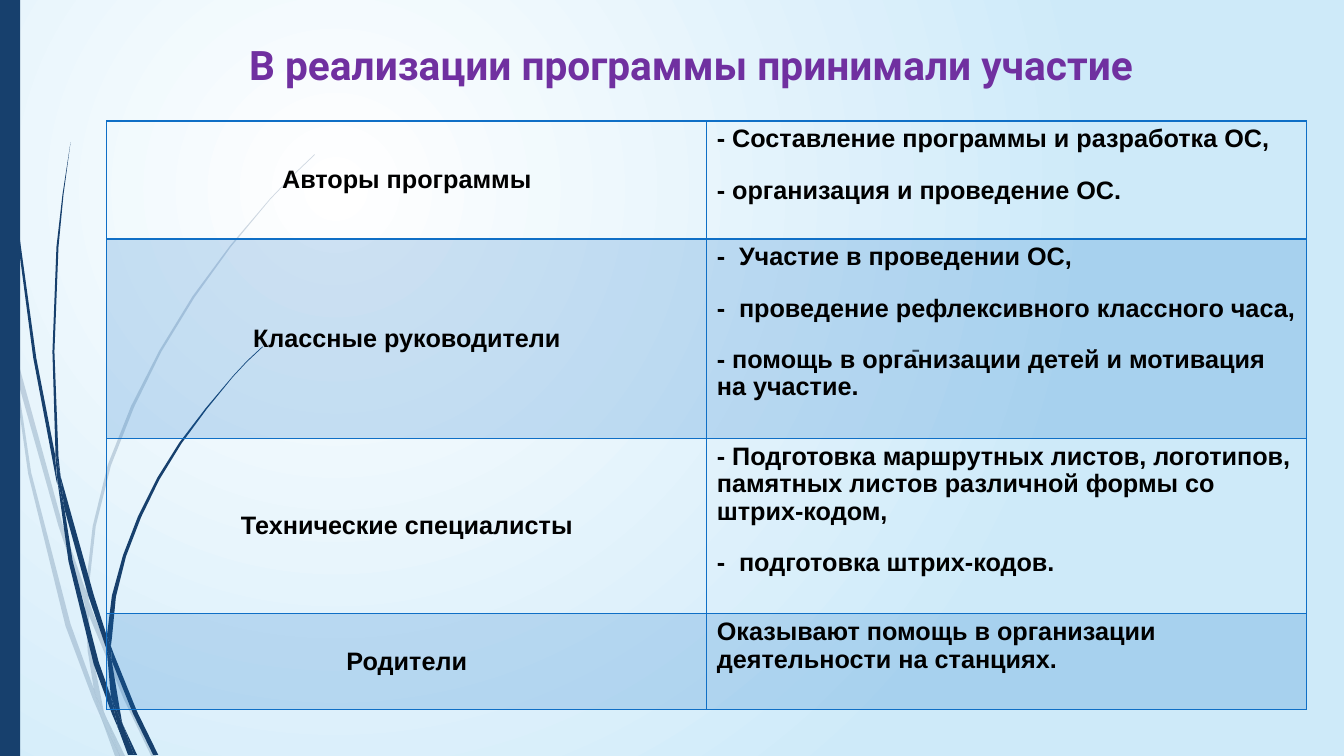
from pptx import Presentation
from pptx.dml.color import RGBColor
from pptx.enum.shapes import MSO_SHAPE
from pptx.enum.text import MSO_ANCHOR, PP_ALIGN
from pptx.oxml.ns import qn
from pptx.util import Inches, Pt
from lxml.etree import SubElement

COLORS = {
    "white": "FFFFFF", "sky": "CEEAF9", "navy": "17406D", "blue": "0F6FC6",
    "purple": "7030A0", "gray": "404040", "black": "000000",
}
TITLE = "В реализации программы принимали участие"
TITLE_FONT = {"name": "Roboto", "size": Pt(29), "bold": True}
TABLE_FONT = {"name": "Arial", "size": Pt(18), "bold": True}
DASH_FONT = {"name": "Arial", "size": Pt(19.4), "bold": False}

ROWS = [
    (1.17, "Авторы программы", [
        "- Составление программы и разработка ОС,",
        "- организация и проведение ОС."]),
    (1.98, "Классные руководители", [
        "-\tУчастие в проведении ОС,",
        "-\tпроведение рефлексивного классного часа,",
        "- помощь в организации детей и мотивация на участие."]),
    (1.74, "Технические специалисты", [
        "- Подготовка маршрутных листов, логотипов, памятных листов "
        "различной формы со штрих-кодом,",
        "-\tподготовка штрих-кодов."]),
    (0.95, "Родители", [
        "Оказывают помощь в организации деятельности на станциях."]),
]

PALE_STALKS = [
    [(0.11, 3.5), (0.09, 3.22), (0, 2.82), (0, 2.99), (0.1, 3.44)],
    [(0.58, 5.22), (0.84, 5.99), (0.85, 5.86), (0.62, 5.2), (0.14, 3.45),
     (0.17, 3.76)],
    [(0.92, 6.07), (0.88, 5.96), (0.88, 6.1), (1.23, 6.94), (1.5, 7.5),
     (1.55, 7.5), (1.27, 6.92)],
    [(1.19, 7.5), (1.24, 7.5), (1.05, 7.11)],
    [(0.93, 6.83), (0.7, 6.19), (0.31, 4.69), (0.17, 3.76), (0.11, 3.5),
     (0.28, 4.7), (0.65, 6.21), (0.92, 6.93), (1.01, 7.14), (0.99, 7.07)],
    [(0.84, 5.99), (0.87, 6.46), (0.93, 6.83), (0.96, 6.92), (1.05, 7.11),
     (1.03, 7.06), (0.91, 6.46), (0.88, 6.1), (0.88, 6.08)],
    [(0.88, 5.84), (0.95, 5.22), (1.1, 4.62), (1.33, 4.04), (1.6, 3.49),
     (1.93, 2.95), (2.29, 2.45), (2.68, 1.98), (2.9, 1.75), (3.12, 1.54),
     (3.12, 1.53), (2.89, 1.75), (2.68, 1.97), (2.28, 2.44), (1.91, 2.94),
     (1.58, 3.48), (1.3, 4.03), (1.07, 4.61), (0.92, 5.22), (0.85, 5.84),
     (0.85, 5.86), (0.88, 5.96)],
    [(1.01, 7.14), (1.14, 7.5), (1.19, 7.5)],
    [(0.88, 6.08), (0.88, 6.1), (0.88, 5.96), (0.85, 5.86), (0.84, 5.99)],
    [(0.96, 6.92), (0.93, 6.83), (0.99, 7.07), (1.01, 7.14), (1.19, 7.5),
     (1.05, 7.11)],
]
DARK_STALKS = [
    [(0.07, 1.1), (0.17, 2.33), (0.33, 3.55), (0.56, 4.77), (0.57, 4.81),
     (0.55, 4.57), (0.55, 4.53), (0.36, 3.55), (0.19, 2.32), (0.08, 1.09),
     (0.05, 0.48), (0.04, 0), (0.03, 0), (0.04, 0.48)],
    [(0.88, 5.92), (1.06, 6.45), (1.06, 6.33), (1.06, 6.31), (0.93, 5.9),
     (0.6, 4.72), (0.64, 5.05)],
    [(1.13, 6.49), (1.1, 6.41), (1.11, 6.56), (1.32, 7.08), (1.52, 7.49),
     (1.57, 7.49), (1.36, 7.06)],
    [(1.1, 6.91), (0.98, 6.57), (0.72, 5.56), (0.64, 5.05), (0.57, 4.77),
     (0.68, 5.57), (0.93, 6.59), (1.11, 7.08), (1.17, 7.22), (1.16, 7.17)],
    [(0.6, 4.72), (0.58, 4.53), (0.54, 3.49), (0.58, 2.45), (0.63, 1.93),
     (0.7, 1.41), (0.62, 1.93), (0.56, 2.45), (0.52, 3.49), (0.55, 4.49)],
    [(1.33, 7.49), (1.36, 7.49), (1.22, 7.19)],
    [(0.57, 4.77), (0.64, 5.05), (0.6, 4.72), (0.55, 4.49), (0.55, 4.53)],
    [(1.11, 6.33), (1.15, 5.92), (1.25, 5.52), (1.4, 5.13), (1.58, 4.76),
     (1.8, 4.4), (2.05, 4.06), (2.31, 3.74), (2.45, 3.59), (2.61, 3.44),
     (2.6, 3.44), (2.45, 3.58), (2.31, 3.73), (2.04, 4.05), (1.78, 4.39),
     (1.56, 4.74), (1.37, 5.12), (1.22, 5.51), (1.11, 5.91), (1.06, 6.31),
     (1.1, 6.41)],
    [(1.17, 7.22), (1.27, 7.49), (1.31, 7.49)],
    [(1.06, 6.45), (1.1, 6.91), (1.16, 7.06), (1.22, 7.19), (1.21, 7.16),
     (1.11, 6.56), (1.09, 6.51)],
    [(1.06, 6.45), (1.09, 6.51), (1.11, 6.56), (1.1, 6.41), (1.06, 6.31),
     (1.06, 6.33)],
    [(1.16, 7.06), (1.1, 6.91), (1.16, 7.17), (1.17, 7.22), (1.3, 7.49),
     (1.33, 7.49), (1.22, 7.19)],
]


def rgb(color):
    return RGBColor.from_string(COLORS[color])


def set_fill(owner, color, parent, opacity=100):
    owner.fill.solid()
    owner.fill.fore_color.rgb = rgb(color)
    if opacity < 100:
        srgb = parent.find(qn("a:solidFill")).find(qn("a:srgbClr"))
        SubElement(srgb, qn("a:alpha"), val=str(opacity * 1000))


def paint_shape(shape, color, opacity=100):
    set_fill(shape, color, shape.element.spPr, opacity)
    shape.line.fill.background()
    shape.shadow.inherit = False


def paint_background(slide):
    fill = slide.background.fill
    fill.gradient()
    for stop, color in zip(fill.gradient_stops, ("white", "sky")):
        stop.color.rgb = rgb(color)
    gradient = slide.element.find(".//" + qn("a:gradFill"))
    gradient.remove(gradient.find(qn("a:lin")))
    circle = SubElement(gradient, qn("a:path"), path="circle")
    SubElement(circle, qn("a:fillToRect"),
               l="50000", t="50000", r="100000", b="100000")


def add_stalks(slide, outlines, opacity):
    group = slide.shapes.add_group_shape()
    for outline in outlines:
        start, *points = [(Inches(x), Inches(y)) for x, y in outline]
        builder = group.shapes.build_freeform(*start)
        builder.add_line_segments(points, close=True)
        paint_shape(builder.convert_to_shape(), "navy", opacity)


def write_paragraph(paragraph, text, font, color, **layout):
    run = paragraph.add_run()
    run.text = text
    for name, value in layout.items():
        setattr(paragraph, name, value)
    for name, value in font.items():
        setattr(run.font, name, value)
    run.font.color.rgb = rgb(color)


def write_box(shape, position, text, font, color, **layout):
    shape.left, shape.top, shape.width, shape.height = map(Inches, position)
    frame = shape.text_frame
    frame.word_wrap = True
    for side in ("left", "top", "right", "bottom"):
        setattr(frame, f"margin_{side}", 0)
    write_paragraph(frame.paragraphs[0], text, font, color, **layout)


def set_borders(cell, widths):
    properties = cell._tc.get_or_add_tcPr()
    for side, width in widths.items():
        line = SubElement(properties, qn(f"a:ln{side}"), w=str(Pt(width)))
        fill = SubElement(line, qn("a:solidFill"))
        SubElement(fill, qn("a:srgbClr"), val=COLORS["blue"])


def write_duties(cell, duties):
    for index, duty in enumerate(duties):
        frame = cell.text_frame
        paragraph = frame.add_paragraph() if index else frame.paragraphs[0]
        if "\t" in duty:
            tabs = SubElement(paragraph._p.get_or_add_pPr(), qn("a:tabLst"))
            SubElement(tabs, qn("a:tab"), pos=str(Inches(0.22)), algn="l")
        write_paragraph(paragraph, duty, TABLE_FONT, "black",
                        line_spacing=0.97, space_before=Pt(17.1 if index else 0))


def add_roles_table(slide):
    table = slide.shapes.add_table(
        len(ROWS), 2, Inches(1.06), Inches(1.2), Inches(11.9),
        Inches(sum(height for height, _, _ in ROWS))).table
    table.first_row = table.horz_banding = False
    for index, (height, role, duties) in enumerate(ROWS):
        table.rows[index].height = Inches(height)
        role_cell, duties_cell = table.rows[index].cells
        for cell in (role_cell, duties_cell):
            set_borders(cell, {"L": 1, "R": 1, "T": 2 if index == 1 else 1,
                               "B": 1 if index else 2})
            if index % 2:
                set_fill(cell, "blue", cell._tc.tcPr, 20)
            else:
                cell.fill.background()
        role_cell.vertical_anchor = MSO_ANCHOR.MIDDLE
        write_paragraph(role_cell.text_frame.paragraphs[0], role, TABLE_FONT,
                        "black", alignment=PP_ALIGN.CENTER)
        write_duties(duties_cell, duties)


def main():
    presentation = Presentation()
    presentation.slide_width, presentation.slide_height = Inches(13.33), Inches(7.5)
    slide = presentation.slides.add_slide(presentation.slide_layouts[5])
    paint_background(slide)
    add_stalks(slide, PALE_STALKS, 20)
    add_stalks(slide, DARK_STALKS, 100)
    band = slide.shapes.add_shape(MSO_SHAPE.RECTANGLE, 0, 0, Inches(0.2), Inches(7.5))
    paint_shape(band, "navy")
    title = slide.shapes.title
    write_box(title, (0.86, 0.39, 12, 0.49), TITLE, TITLE_FONT, "purple",
              alignment=PP_ALIGN.CENTER)
    title.text_frame.vertical_anchor = MSO_ANCHOR.MIDDLE
    dash = slide.shapes.add_textbox(0, 0, 0, 0)
    write_box(dash, (9.04, 3.29, 4, 0.4), "-", DASH_FONT, "gray")
    add_roles_table(slide)
    presentation.save("out.pptx")


if __name__ == "__main__":
    main()
